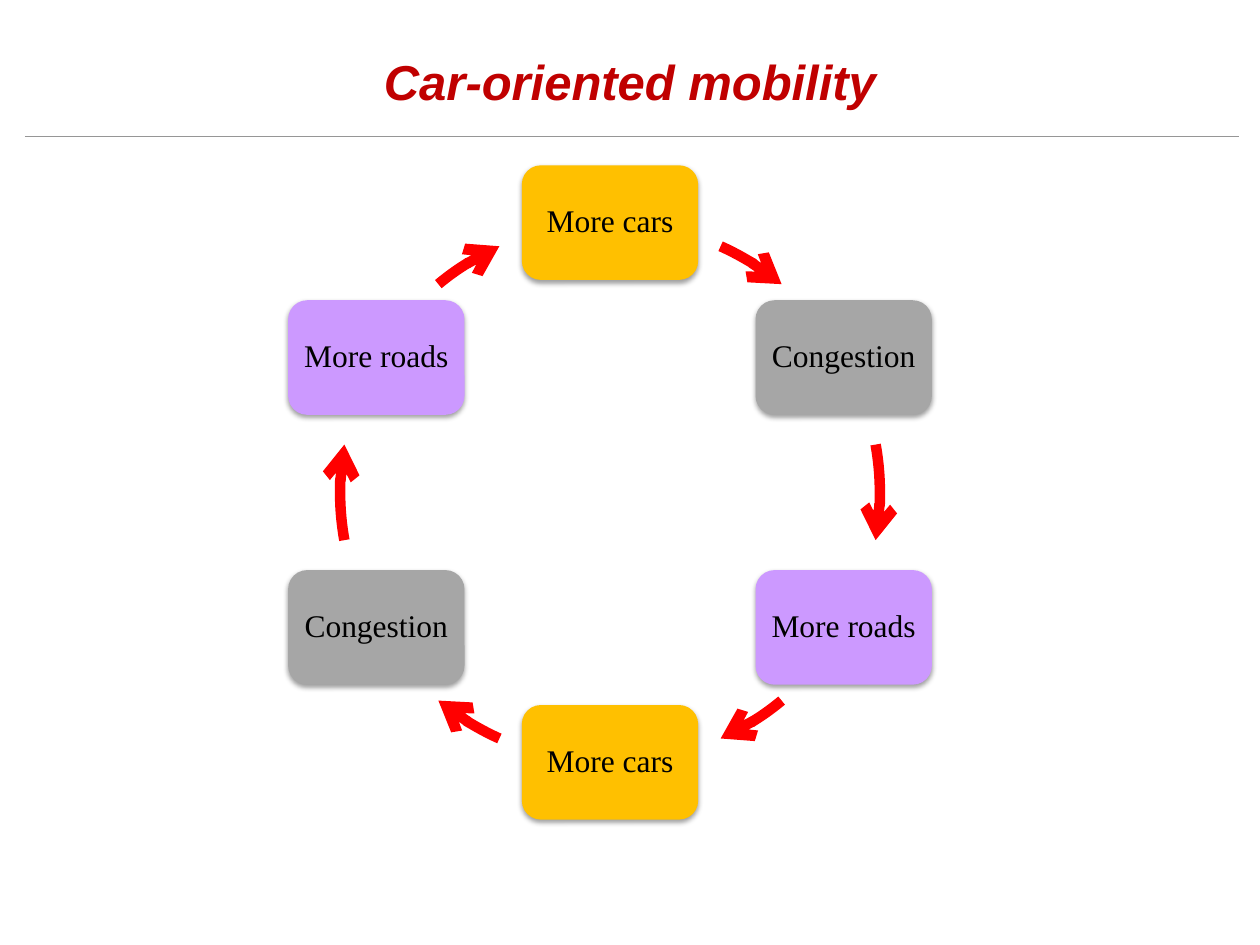
import math

from lxml import etree
from pptx import Presentation
from pptx.dml.color import RGBColor
from pptx.enum import shapes, text
from pptx.oxml import ns
from pptx.util import Pt

RED = RGBColor(0xFF, 0x00, 0x00)
DARK_RED = RGBColor(0xC0, 0x00, 0x00)
RULE_GREY = RGBColor(0x96, 0x96, 0x96)
BLACK = RGBColor(0x00, 0x00, 0x00)
AMBER = RGBColor(0xFF, 0xC0, 0x00)
GREY = RGBColor(0xA6, 0xA6, 0xA6)
LILAC = RGBColor(0xCC, 0x99, 0xFF)

STAGES = [("More cars", AMBER), ("Congestion", GREY), ("More roads", LILAC)] * 2
STAGE_WIDTH, STAGE_HEIGHT = 100.8, 65.5
# Middle angle and half sweep of the three arrows on the right half of the ring
ARROWS = [(-58.15, 7.65), (0, 10.2), (58.15, 7.65)]


def add_xml(parent, tag, **attributes):
    return etree.SubElement(
        parent, ns.qn(tag), {name: str(value) for name, value in attributes.items()}
    )


def add_title(page, left, top, width, height):
    box = page.shapes.add_textbox(Pt(left), Pt(top), Pt(width), Pt(height))
    frame = box.text_frame
    frame.word_wrap = True
    para = frame.paragraphs[0]
    para.text = "Car-oriented mobility"
    para.alignment = text.PP_ALIGN.CENTER
    font = para.font
    font.name, font.size = "Arial", Pt(28)
    font.bold = font.italic = True
    font.color.rgb = DARK_RED


def add_rule(page, left, top, width):
    rule = page.shapes.add_connector(
        shapes.MSO_CONNECTOR.STRAIGHT, Pt(left), Pt(top), Pt(left + width), Pt(top)
    )
    rule.line.color.rgb = RULE_GREY
    rule.line.width = Pt(0.75)
    add_xml(rule._element.spPr, "a:effectLst")


def add_soft_shadow(shape):
    effects = add_xml(shape._element.spPr, "a:effectLst")
    shadow = add_xml(effects, "a:outerShdw", blurRad=Pt(3.1), dist=Pt(1.6),
                     dir=90 * 60000, rotWithShape=0)
    color = add_xml(shadow, "a:srgbClr", val="000000")
    add_xml(color, "a:alpha", val=38000)


def add_stage(page, center_x, center_y, label, color):
    stage = page.shapes.add_shape(
        shapes.MSO_SHAPE.ROUNDED_RECTANGLE,
        Pt(center_x - STAGE_WIDTH / 2), Pt(center_y - STAGE_HEIGHT / 2),
        Pt(STAGE_WIDTH), Pt(STAGE_HEIGHT),
    )
    stage.fill.solid()
    stage.fill.fore_color.rgb = color
    stage.line.fill.background()
    add_soft_shadow(stage)
    frame = stage.text_frame
    frame.word_wrap = True
    frame.vertical_anchor = text.MSO_ANCHOR.MIDDLE
    frame.margin_left = frame.margin_right = Pt(4)
    frame.margin_top = frame.margin_bottom = Pt(4)
    para = frame.paragraphs[0]
    para.text = label
    para.alignment = text.PP_ALIGN.CENTER
    para.line_spacing = 0.9
    para.font.name, para.font.size = "Times New Roman", Pt(18)
    para.font.color.rgb = BLACK


def add_arc_arrow(page, left, top, size, start, end):
    """Draw a clockwise arrow on the circle in the box; angles are in degrees."""
    arrow = page.shapes.add_shape(
        shapes.MSO_SHAPE.ARC, Pt(left), Pt(top), Pt(size), Pt(size)
    )
    for index, angle in enumerate((start, end)):
        # An adjustment of 1 stands for 100000 units of 1/60000 degree
        arrow.adjustments[index] = angle % 360 * 0.6
    arrow.shadow.inherit = False
    arrow.fill.background()
    arrow.line.color.rgb = RED
    arrow.line.width = Pt(6)
    add_xml(arrow.line._get_or_add_ln(), "a:tailEnd", type="arrow")


def add_cycle(page, left, top, size):
    """Place the stages evenly round the circle in the box, with arrows between."""
    radius = size / 2
    turn = 360 / len(STAGES)
    for index, (label, color) in enumerate(STAGES):
        angle = math.radians(index * turn - 90)
        add_stage(page, left + radius * (1 + math.cos(angle)),
                  top + radius * (1 + math.sin(angle)), label, color)
    for half_turn in (0, 180):
        for middle, sweep in ARROWS:
            add_arc_arrow(page, left, top, size,
                          half_turn + middle - sweep, half_turn + middle + sweep)


def main():
    deck = Presentation()
    deck.slide_width, deck.slide_height = Pt(720), Pt(540)
    page = deck.slides.add_slide(deck.slide_layouts[6])
    add_rule(page, left=14.2, top=78, width=694)
    add_title(page, left=36, top=25.9, width=648, height=90)
    add_cycle(page, left=194.4, top=127.2, size=308.4)
    deck.save("out.pptx")


if __name__ == "__main__":
    main()
